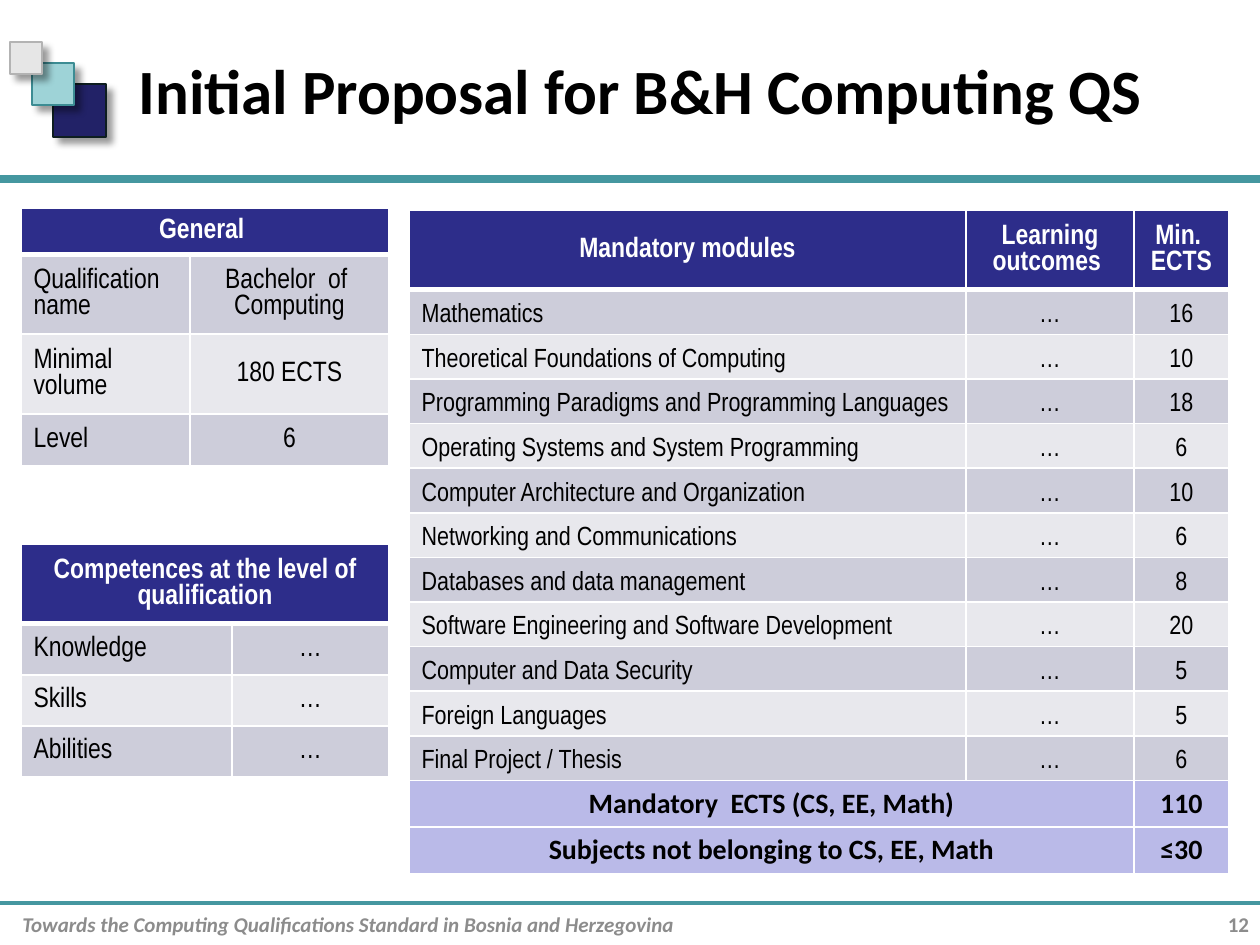
"""Build the slide with the proposed computing qualification standard."""
from lxml import etree
from pptx import Presentation
from pptx.dml.color import RGBColor
from pptx.enum.shapes import MSO_CONNECTOR, MSO_SHAPE
from pptx.enum.text import MSO_ANCHOR, MSO_AUTO_SIZE, PP_ALIGN
from pptx.oxml.ns import qn
from pptx.util import Pt

PX = 914400 // 126
LEFT, MID, RIGHT = PP_ALIGN.LEFT, PP_ALIGN.CENTER, PP_ALIGN.RIGHT
MIDDLE, BOTTOM = MSO_ANCHOR.MIDDLE, MSO_ANCHOR.BOTTOM
FIXED = MSO_AUTO_SIZE.NONE
STRAIGHT, RECT = MSO_CONNECTOR.STRAIGHT, MSO_SHAPE.RECTANGLE
BLACK, WHITE = RGBColor(0, 0, 0), RGBColor(255, 255, 255)
GREY, TEAL = RGBColor(0x8C, 0x8C, 0x8C), RGBColor(0x45, 0x97, 0xA0)
NAVY, LILAC = RGBColor(0x2D, 0x2D, 0x8A), RGBColor(0xBA, 0xBA, 0xE8)
BANDS = RGBColor(0xCD, 0xCD, 0xDA), RGBColor(0xE8, 0xE8, 0xED)
SANS, NARROW = "Calibri", "Arial Narrow"

TITLE = "Initial Proposal for B&H Computing QS"
FOOTER = "Towards the Computing Qualifications Standard in Bosnia and Herzegovina"
NUMBER = "12"
RULES = [(179, 4.5), (903, 2.25)]
SQUARES = [
    (53, 84, 53, RGBColor(0x22, 0x22, 0x67), RGBColor(0x0E, 0x1E, 0x20)),
    (32, 63, 42, RGBColor(0x9E, 0xD3, 0xD7), RGBColor(0x3C, 0x8C, 0x93)),
    (10, 42, 32, RGBColor(0xE6, 0xE6, 0xE6), RGBColor(0xB3, 0xB3, 0xB3)),
]
GENERAL = [
    ("General ", None),
    ("Qualification\nname", "Bachelor  of  Computing"),
    ("Minimal\nvolume", "180 ECTS"),
    ("Level", "6"),
]
SKILLS = [
    ("Competences at the level of qualification", None),
    ("Knowledge", "…"),
    ("Skills", "…"),
    ("Abilities", "…"),
]
MODULES = [
    ("Mathematics", 16),
    ("Theoretical Foundations of Computing", 10),
    ("Programming Paradigms and Programming Languages", 18),
    ("Operating Systems and System Programming", 6),
    ("Computer Architecture and Organization", 10),
    ("Networking and Communications", 6),
    ("Databases and data management", 8),
    ("Software Engineering and Software Development", 20),
    ("Computer and Data Security", 5),
    ("Foreign Languages", 5),
    ("Final Project / Thesis", 6),
]
HEAD = ("Mandatory modules", "Learning outcomes ", "Min. \nECTS")
TOTALS = [
    ("Mandatory  ECTS (CS, EE, Math)", None, "110"),
    ("Subjects not belonging to CS, EE, Math", None, "≤30"),
]
PLAN = [HEAD] + [(name, "…", str(ects)) for name, ects in MODULES] + TOTALS


def px(*nums):
    return [round(num * PX) for num in nums]


def write(frame, text, size, color, font=SANS, bold=True, align=LEFT,
          italic=False):
    frame.text = text
    for para in frame.paragraphs:
        para.alignment = align
        for run in para.runs:
            face = run.font
            face.name, face.size, face.bold = font, Pt(size), bold
            face.italic = italic
            face.color.rgb = color


def add_rule(slide, y, width):
    rule = slide.shapes.add_connector(STRAIGHT, *px(0, y, 1260, y))
    rule.line.color.rgb = TEAL
    rule.line.width = Pt(width)
    etree.SubElement(rule._element.spPr, qn("a:effectLst"))


def add_square(slide, x, y, side, fill, edge):
    box = slide.shapes.add_shape(RECT, *px(x, y, side, side))
    box.fill.solid()
    box.fill.fore_color.rgb = fill
    box.line.color.rgb = edge
    box.line.width = Pt(0.75)
    box.shadow.inherit = False
    glow = etree.SubElement(
        box._element.spPr.find(qn("a:effectLst")), qn("a:outerShdw"),
        blurRad=str(Pt(4)), dist=str(Pt(5)), dir="2700000", rotWithShape="0")
    tint = etree.SubElement(glow, qn("a:srgbClr"), val="000000")
    etree.SubElement(tint, qn("a:alpha"), val="40000")


def add_note(slide, spot, text, **style):
    frame = slide.shapes.add_textbox(*px(*spot)).text_frame
    frame.word_wrap = True
    frame.vertical_anchor = MIDDLE
    write(frame, text, 12, GREY, **style)
    return frame


def underline(cell):
    edge = etree.SubElement(cell._tc.get_or_add_tcPr(), qn("a:lnB"),
                            w=str(Pt(3)))
    fill = etree.SubElement(edge, qn("a:solidFill"))
    etree.SubElement(fill, qn("a:srgbClr"), val=str(WHITE))


def add_grid(slide, x, y, cols, rows, data, size=16, anchor=MIDDLE, sums=0):
    spot = px(x, y, sum(cols), sum(rows))
    grid = slide.shapes.add_table(len(rows), len(cols), *spot).table
    for col, wide in zip(grid.columns, px(*cols)):
        col.width = wide
    for row, high in zip(grid.rows, px(*rows)):
        row.height = high
    for i, line in enumerate(data):
        head, total = i == 0, i >= len(data) - sums
        for j, text in enumerate(line):
            cell = grid.cell(i, j)
            if head:
                underline(cell)
            cell.fill.solid()
            cell.fill.fore_color.rgb = (
                NAVY if head else LILAC if total else BANDS[(i - 1) % 2])
            if text is None:
                grid.cell(i, j - 1).merge(cell)
                continue
            cell.vertical_anchor = MIDDLE if head else anchor
            align = MID if head or total or j else LEFT
            write(cell.text_frame, text, 16 if head or total else size,
                  WHITE if head else BLACK, SANS if total else NARROW,
                  head or total, align)


def main():
    deck = Presentation()
    deck.slide_width, deck.slide_height = px(1260, 945)
    slide = deck.slides.add_slide(deck.slide_layouts[5])
    for rule in RULES:
        add_rule(slide, *rule)
    for square in SQUARES:
        add_square(slide, *square)

    title = slide.shapes.title
    title.left, title.top, title.width, title.height = px(126, 21, 1113, 136)
    title.text_frame.auto_size = FIXED
    title.text_frame.vertical_anchor = MIDDLE
    write(title.text_frame, TITLE, 36, BLACK)

    add_note(slide, (10, 903, 1197, 42), FOOTER, italic=True)
    page = add_note(slide, (1207, 903, 42, 42), NUMBER, align=RIGHT)
    page.margin_right = 0

    add_grid(slide, 21, 208, [169, 199], [38, 65, 65, 52], GENERAL)
    add_grid(slide, 21, 544, [211, 157], [65, 51, 51, 51], SKILLS)
    rows = [65] + [44.6] * len(MODULES) + [46.5] * len(TOTALS)
    add_grid(slide, 409, 210, [557, 168, 95], rows, PLAN, 15, BOTTOM,
             len(TOTALS))
    deck.save("out.pptx")


if __name__ == "__main__":
    main()
